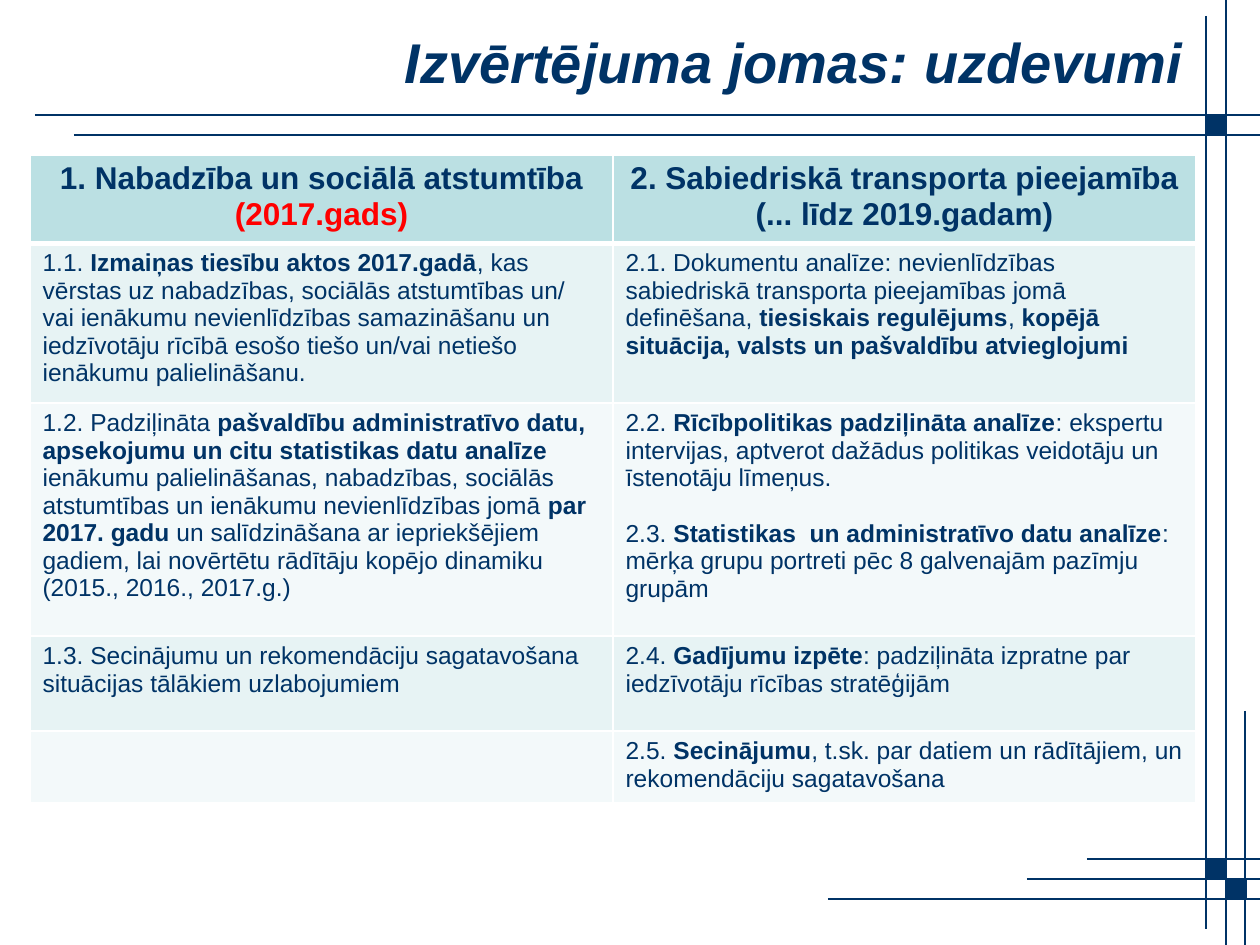
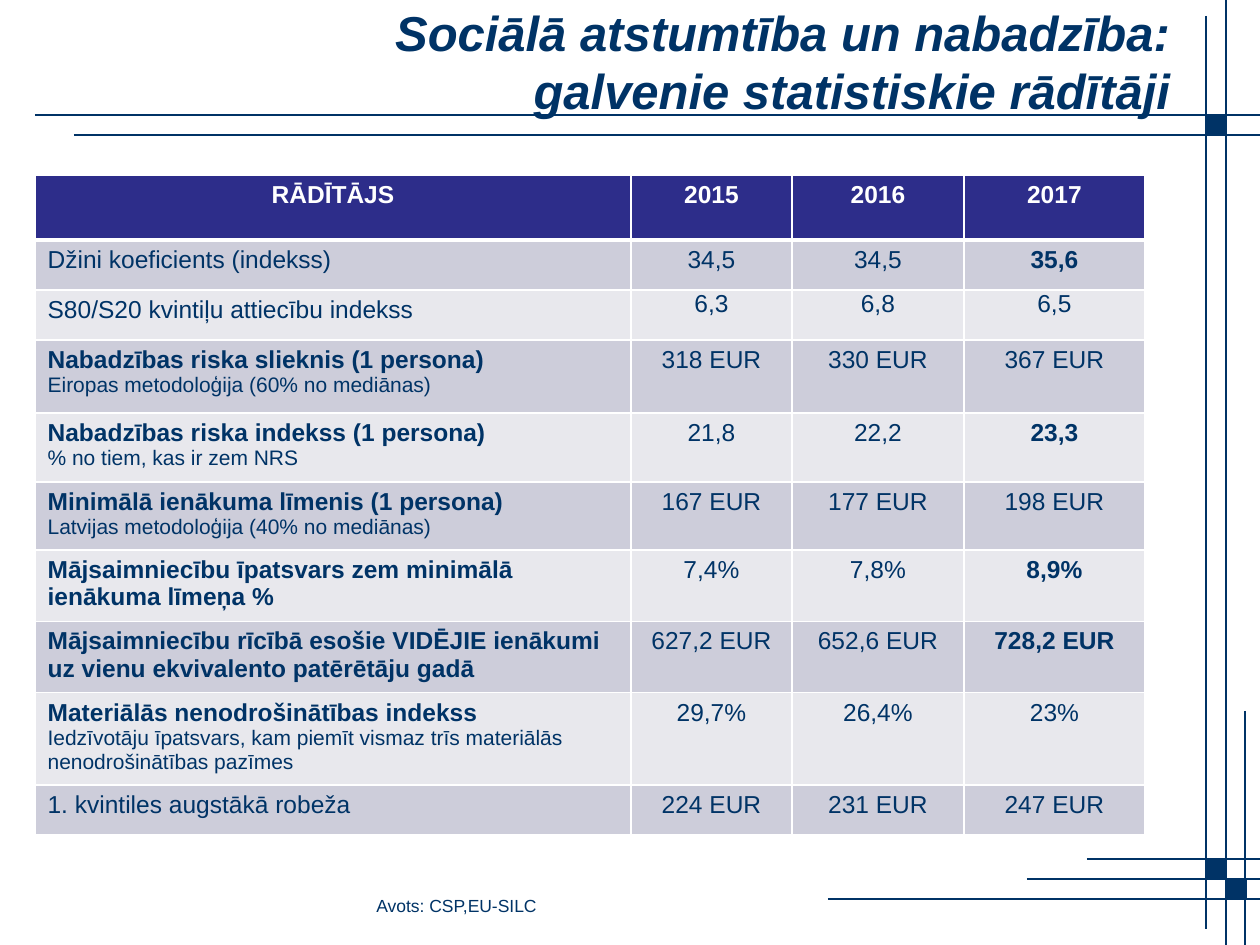
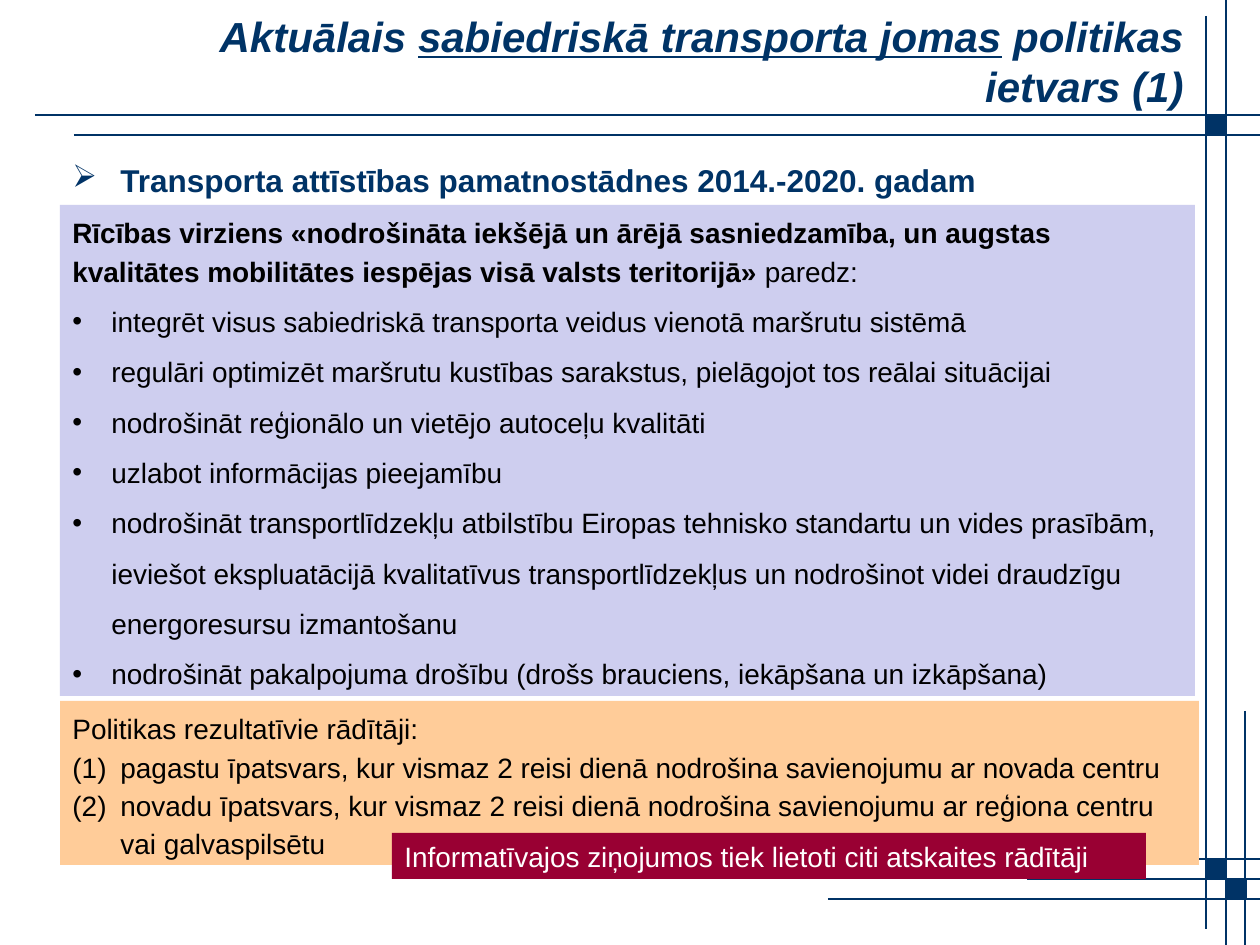
from dataclasses import dataclass

from lxml.etree import SubElement
from pptx import Presentation
from pptx.dml.color import RGBColor as RGB
from pptx.enum.shapes import MSO_CONNECTOR as CONNECTOR, MSO_SHAPE as SHAPE
from pptx.enum.text import MSO_ANCHOR as ANCHOR, PP_ALIGN as ALIGN
from pptx.oxml.ns import qn
from pptx.util import Emu, Pt

WIDTH, HEIGHT = 1260, 945
EMU_PER_PX = 914400 / 126


def px(length):
    return Emu(round(length * EMU_PER_PX))


@dataclass(frozen=True)
class Theme:
    font: str = "Arial"
    navy: str = "003366"
    black: str = "000000"
    white: str = "FFFFFF"
    red: str = "FF0000"
    crimson: str = "990033"
    lavender: str = "CECEEF"
    peach: str = "FFCC99"
    teal_table: tuple = ("BBE0E3", "E7F3F4", "F3F9FA")
    indigo_table: tuple = ("2D2D8A", "CDCDDA", "E8E8ED")
    heading: int = 18
    body: int = 16
    cell: int = 14
    note: int = 12
    source: int = 10


THEME = Theme()


def add_bullet(paragraph, bullet, indent):
    props = paragraph._p.get_or_add_pPr()
    props.set("marL", str(px(indent)))
    props.set("indent", str(-px(indent)))
    if bullet == "(1)":
        SubElement(props, qn("a:buFont"), typeface=THEME.font)
        SubElement(props, qn("a:buAutoNum"), type="arabicParenBoth")
    else:
        SubElement(props, qn("a:buFont"), typeface="Wingdings" if bullet == "➢" else THEME.font)
        SubElement(props, qn("a:buChar"), char="Ø" if bullet == "➢" else bullet)


def write(paragraph, text, size=THEME.body, color=THEME.navy, bold=False, italic=False,
          emphasis="bold", align=None, spacing=None, before=None, bullet=None, indent=0):
    if bullet:
        add_bullet(paragraph, bullet, indent)
    if align is not None:
        paragraph.alignment = align
    if spacing:
        paragraph.line_spacing = spacing
    if before:
        paragraph.space_before = Pt(before)
    for line_index, line in enumerate(text.split("\n")):
        if line_index:
            paragraph.add_line_break()
        for part_index, part in enumerate(line.split("*")):
            if not part:
                continue
            run = paragraph.add_run()
            run.text = part
            font = run.font
            font.name, font.size, font.color.rgb = THEME.font, Pt(size), RGB.from_string(color)
            font.bold, font.italic = bold, italic
            if part_index % 2:
                setattr(font, emphasis, True)


def fill_frame(frame, entries, **shared):
    for index, entry in enumerate(entries):
        text, own = entry if isinstance(entry, tuple) else (entry, {})
        paragraph = frame.add_paragraph() if index else frame.paragraphs[0]
        write(paragraph, text, **{**shared, **own})


def set_borders(cell, **widths):
    props = cell._tc.get_or_add_tcPr()
    for side in "LRTB":
        border = SubElement(props, qn(f"a:ln{side}"), w=str(Pt(widths.get(side, 1))))
        SubElement(SubElement(border, qn("a:solidFill")), qn("a:srgbClr"), val=THEME.white)


class Deck:
    def __init__(self):
        self.theme = THEME
        self.presentation = Presentation()
        self.presentation.slide_width = px(WIDTH)
        self.presentation.slide_height = px(HEIGHT)
        self.slide = None

    def start_slide(self, title, size, **fmt):
        self.slide = self.presentation.slides.add_slide(self.presentation.slide_layouts[6])
        self.grid()
        self.text(64, 16, 1132, 90, [title], anchor=ANCHOR.MIDDLE, size=size, bold=True,
                  italic=True, align=ALIGN.RIGHT, **fmt)

    def grid(self):
        for left, y in ((35, 115), (74, 135), (1087, 859), (1027, 879), (828, 899)):
            self.line(left, y, WIDTH, y)
        for x, top, bottom in ((1206, 16, 929), (1226, 0, HEIGHT), (1245, 711, HEIGHT)):
            self.line(x, top, x, bottom)
        for x, y in ((1206, 115), (1206, 859), (1226, 879)):
            self.box(x, y, 20, 20, self.theme.navy, outline=self.theme.navy)

    def line(self, x1, y1, x2, y2):
        rule = self.slide.shapes.add_connector(CONNECTOR.STRAIGHT, px(x1), px(y1), px(x2), px(y2))
        rule.line.color.rgb = RGB.from_string(self.theme.navy)
        rule.line.width = Pt(0.75)
        SubElement(rule._element.spPr, qn("a:effectLst"))

    def box(self, x, y, width, height, fill, entries=(), outline=None, **fmt):
        panel = self.slide.shapes.add_shape(SHAPE.RECTANGLE, px(x), px(y), px(width), px(height))
        panel.shadow.inherit = False
        panel.fill.solid()
        panel.fill.fore_color.rgb = RGB.from_string(fill)
        if outline:
            panel.line.color.rgb = RGB.from_string(outline)
            panel.line.width = Pt(0.75)
        else:
            panel.line.fill.background()
        panel.text_frame.vertical_anchor = ANCHOR.TOP
        fill_frame(panel.text_frame, entries, **{"align": ALIGN.LEFT, **fmt})

    def text(self, x, y, width, height, entries, anchor=ANCHOR.TOP, **fmt):
        frame = self.slide.shapes.add_textbox(px(x), px(y), px(width), px(height)).text_frame
        frame.word_wrap = True
        frame.vertical_anchor = anchor
        fill_frame(frame, entries, **fmt)

    def table(self, x, y, columns, heights, rows, fills, header, values=None, tight_row=None):
        grid = self.slide.shapes.add_table(len(rows), len(columns), px(x), px(y),
                                           px(sum(columns)), px(sum(heights))).table
        grid.horz_banding = False
        for column, width in zip(grid.columns, columns):
            column.width = px(width)
        for r, (row, height) in enumerate(zip(rows, heights)):
            grid.rows[r].height = px(height)
            for c, entries in enumerate(row):
                cell = grid.cell(r, c)
                set_borders(cell, T=3 if r == 1 else 1, B=1 if r else 3)
                cell.fill.solid()
                cell.fill.fore_color.rgb = RGB.from_string(fills[2 - r % 2 if r else 0])
                fmt = {"size": self.theme.cell}
                if r == 0:
                    fmt.update(header, bold=True, align=ALIGN.CENTER)
                elif c and values:
                    fmt.update(values)
                    if r == tight_row:
                        cell.margin_left = cell.margin_right = px(9)
                        cell.margin_top = cell.margin_bottom = 0
                fill_frame(cell.text_frame, entries, **fmt)


def build_tasks(deck):
    deck.start_slide("Izvērtējuma jomas: uzdevumi", 32)
    rows = [
        [["1. Nabadzība un sociālā atstumtība", ("(2017.gads)", {"color": THEME.red})],
         ["2. Sabiedriskā transporta pieejamība", "(... līdz 2019.gadam)"]],
        [["1.1. *Izmaiņas tiesību aktos 2017.gadā*, kas vērstas uz nabadzības, sociālās "
          "atstumtības un/ vai ienākumu nevienlīdzības samazināšanu un iedzīvotāju rīcībā "
          "esošo tiešo un/vai netiešo ienākumu palielināšanu."],
         ["2.1. Dokumentu analīze: nevienlīdzības sabiedriskā transporta pieejamības jomā "
          "definēšana, *tiesiskais regulējums*, *kopējā situācija, valsts un pašvaldību "
          "atvieglojumi*"]],
        [["1.2. Padziļināta *pašvaldību administratīvo datu, apsekojumu un citu statistikas "
          "datu analīze *ienākumu palielināšanas, nabadzības, sociālās atstumtības un "
          "ienākumu nevienlīdzības jomā *par 2017. gadu* un salīdzināšana ar iepriekšējiem "
          "gadiem, lai novērtētu rādītāju kopējo dinamiku",
          "(2015., 2016., 2017.g.)"],
         ["2.2. *Rīcībpolitikas padziļināta analīze*: ekspertu intervijas, aptverot dažādus "
          "politikas veidotāju un īstenotāju līmeņus.",
          ("2.3. *Statistikas  un administratīvo datu analīze*: mērķa grupu portreti pēc "
           "8 galvenajām pazīmju grupām", {"before": 16})]],
        [["1.3. Secinājumu un rekomendāciju sagatavošana situācijas tālākiem uzlabojumiem"],
         ["2.4. *Gadījumu izpēte*: padziļināta izpratne par iedzīvotāju rīcības stratēģijām"]],
        [[], ["2.5. *Secinājumu*, t.sk. par datiem un rādītājiem, un rekomendāciju "
              "sagatavošana"]],
    ]
    deck.table(30, 155, [583, 583], [83, 150, 233, 95, 68], rows, THEME.teal_table,
               header={"size": THEME.heading})


def build_indicators(deck):
    deck.start_slide("Sociālā atstumtība un nabadzība: \ngalvenie statistiskie rādītāji ", 28)
    indicators = [
        ("RĀDĪTĀJS", "", "2015", "2016", "2017"),
        ("Džini koeficients (indekss)", "", "34,5", "34,5", "*35,6*"),
        ("S80/S20 kvintiļu attiecību indekss", "", "6,3", "6,8", "6,5"),
        ("*Nabadzības riska slieknis (1 persona)*", "Eiropas metodoloģija (60% no mediānas)",
         "318 EUR", "330 EUR", "367 EUR"),
        ("*Nabadzības riska indekss (1 persona)*", "% no tiem, kas ir zem NRS",
         "21,8", "22,2", "*23,3*"),
        ("*Minimālā ienākuma līmenis (1 persona)*", "Latvijas metodoloģija (40% no mediānas)",
         "167 EUR", "177 EUR", "198 EUR"),
        ("*Mājsaimniecību īpatsvars zem minimālā ienākuma līmeņa %*", "",
         "7,4%", "7,8%", "*8,9%*"),
        ("*Mājsaimniecību rīcībā esošie VIDĒJIE ienākumi uz vienu ekvivalento patērētāju "
         "gadā*", "", "627,2 EUR", "652,6 EUR", "*728,2 EUR*"),
        ("*Materiālās nenodrošinātības indekss*",
         "Iedzīvotāju īpatsvars, kam piemīt vismaz trīs materiālās nenodrošinātības pazīmes",
         "29,7%", "26,4%", "23%"),
        ("1. kvintiles augstākā robeža", "", "224 EUR", "231 EUR", "247 EUR"),
    ]
    rows = [[[name] + ([(detail, {"size": THEME.note})] if detail else [])]
            + [[value] for value in years] for name, detail, *years in indicators]
    deck.table(35, 175, [596, 161, 172, 181], [65, 50, 50, 73, 69, 68, 67, 68, 87, 50], rows,
               THEME.indigo_table, header={"color": THEME.white},
               values={"align": ALIGN.CENTER}, tight_row=2)
    deck.text(364, 886, 364, 35, ["Avots: CSP,EU-SILC"], size=THEME.source, spacing=1.15)


def build_policy(deck):
    deck.start_slide("Aktuālais *sabiedriskā transporta jomas* politikas ietvars (1)", 24,
                     emphasis="underline")
    deck.text(60, 155, 1135, 50, ["Transporta attīstības pamatnostādnes 2014.-2020. gadam"],
              size=THEME.heading, bold=True, bullet="➢", indent=48)
    actions = [
        "integrēt visus sabiedriskā transporta veidus vienotā maršrutu sistēmā",
        "regulāri optimizēt maršrutu kustības sarakstus, pielāgojot tos reālai situācijai",
        "nodrošināt reģionālo un vietējo autoceļu kvalitāti",
        "uzlabot informācijas pieejamību",
        "nodrošināt transportlīdzekļu atbilstību Eiropas tehnisko standartu un vides prasībām, "
        "ieviešot ekspluatācijā kvalitatīvus transportlīdzekļus un nodrošinot videi draudzīgu "
        "energoresursu izmantošanu",
        "nodrošināt pakalpojuma drošību (drošs brauciens, iekāpšana un izkāpšana)",
    ]
    action_format = {"bullet": "•", "indent": 39, "spacing": 1.5}
    deck.box(60, 205, 1135, 491, THEME.lavender,
             ["*Rīcības virziens «nodrošināta iekšējā un ārējā sasniedzamība, un augstas "
              "kvalitātes mobilitātes iespējas visā valsts teritorijā» *paredz:"]
             + [(action, action_format) for action in actions],
             color=THEME.black, spacing=1.14)
    results = [
        "pagastu īpatsvars, kur vismaz 2 reisi dienā nodrošina savienojumu ar novada centru",
        "novadu īpatsvars, kur vismaz 2 reisi dienā nodrošina savienojumu ar reģiona centru "
        "vai galvaspilsētu",
    ]
    deck.box(60, 701, 1139, 164, THEME.peach,
             ["Politikas rezultatīvie rādītāji:"]
             + [(result, {"bullet": "(1)", "indent": 48}) for result in results],
             color=THEME.black, spacing=1.14)
    deck.box(392, 833, 754, 46, THEME.crimson,
             ["Informatīvajos ziņojumos tiek lietoti citi atskaites rādītāji"],
             color=THEME.white)


def main():
    deck = Deck()
    for build in (build_tasks, build_indicators, build_policy):
        build(deck)
    deck.presentation.save("out.pptx")


if __name__ == "__main__":
    main()
